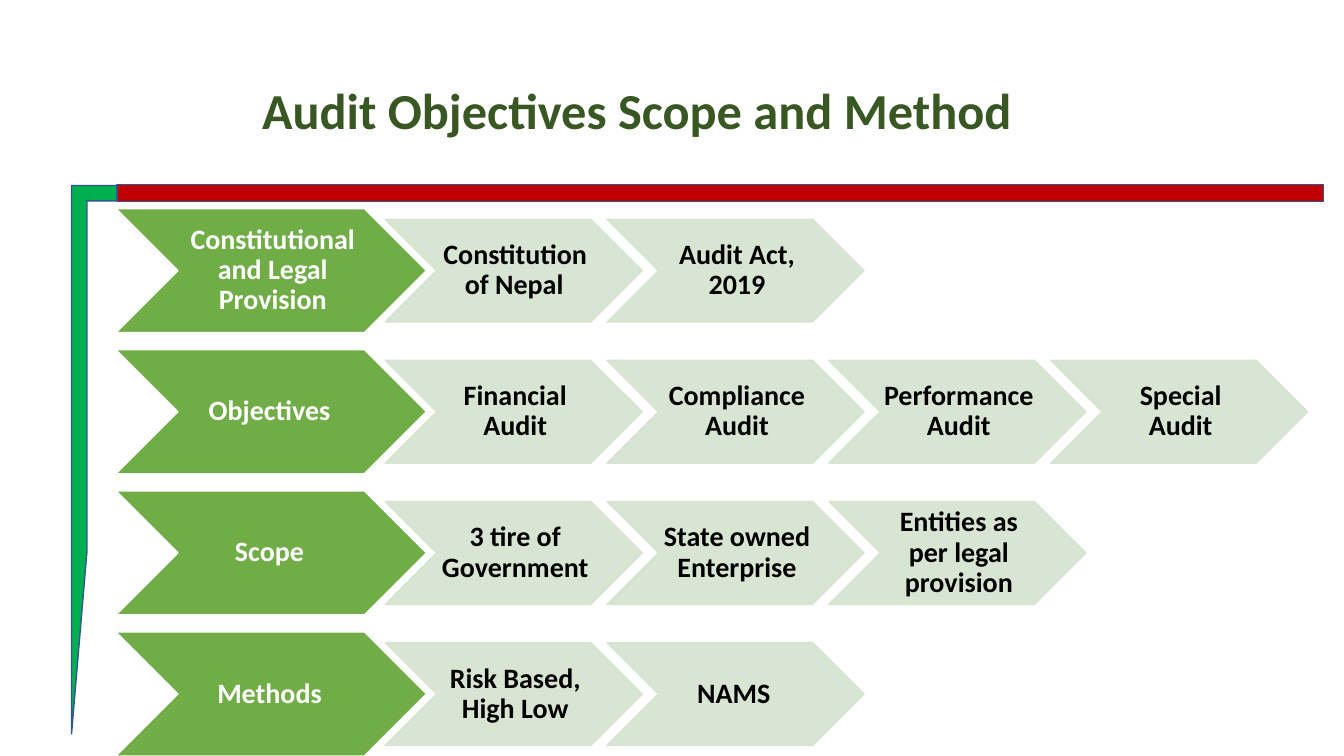
from lxml import etree
from pptx import Presentation
from pptx.dml.color import RGBColor
from pptx.enum.shapes import MSO_SHAPE as Shape
from pptx.enum.text import MSO_ANCHOR as Anchor, MSO_AUTO_SIZE as AutoSize, PP_ALIGN as Align
from pptx.oxml.ns import qn
from pptx.util import Inches, Pt

COLORS = {
    "title": "385723", "frame": "00B050", "bar": "C00000", "outline": "325491",
    "topic": "70AD47", "item": "D5E3CF", "white": "FFFFFF", "black": "000000",
}
FONT = "Calibri"

# Each row: topic, then its items
ROWS = [
    ("Constitutional and Legal Provision", ["Constitution of Nepal\t", "Audit Act, 2019"]),
    ("Objectives ", ["Financial Audit", "Compliance Audit", "Performance Audit", "Special Audit"]),
    ("Scope ", ["3 tire of Government", "State owned Enterprise", "Entities as per legal provision"]),
    ("Methods ", ["Risk Based, High Low", "NAMS "]),
]
ROW_TOP, ROW_STEP = 2.07, 1.4
TOPIC_LEFT, TOPIC_WIDTH, TOPIC_HEIGHT = 1.15, 3.08, 1.23
ITEM_LEFT, ITEM_STEP, ITEM_WIDTH, ITEM_HEIGHT = 3.82, 2.2, 2.55, 1.02


class SlideBuilder:
    def __init__(self, slide):
        self.slide = slide

    def color(self, name):
        return RGBColor.from_string(COLORS[name])

    def set_text(self, text_frame, text, size, color, align):
        text_frame.text = text
        text_frame.word_wrap = True
        text_frame.auto_size = AutoSize.NONE
        text_frame.vertical_anchor = Anchor.MIDDLE
        paragraph = text_frame.paragraphs[0]
        paragraph.alignment = align
        paragraph.line_spacing = 0.9
        for run in paragraph.runs:
            run.font.name = FONT
            run.font.size = Pt(size)
            run.font.bold = True
            run.font.color.rgb = self.color(color)

    def title(self, text, left, top, width, height):
        title = self.slide.shapes.title
        title.left, title.top = Inches(left), Inches(top)
        title.width, title.height = Inches(width), Inches(height)
        self.set_text(title.text_frame, text, 36, "title", Align.LEFT)

    def shape(self, kind, left, top, width, height, fill, line):
        shape = self.slide.shapes.add_shape(
            kind, Inches(left), Inches(top), Inches(width), Inches(height))
        shape.shadow.inherit = False
        shape.fill.solid()
        shape.fill.fore_color.rgb = self.color(fill)
        shape.line.color.rgb = self.color(line)
        shape.line.width = Pt(1)
        return shape

    def chevron(self, text, left, top, width, height, fill, line, text_color, opacity=100):
        shape = self.shape(Shape.CHEVRON, left, top, width, height, fill, line)
        if opacity < 100:
            for color in shape._element.spPr.iter(qn("a:srgbClr")):
                etree.SubElement(color, qn("a:alpha"), val=str(opacity * 1000))
        text_frame = shape.text_frame
        text_frame.margin_left, text_frame.margin_right = Inches(0.03), Inches(0)
        text_frame.margin_top = text_frame.margin_bottom = Inches(0.01)
        self.set_text(text_frame, text, 20, text_color, Align.CENTER)


def main():
    presentation = Presentation()
    presentation.slide_width, presentation.slide_height = Inches(13.33), Inches(7.5)
    slide = presentation.slides.add_slide(presentation.slide_layouts.get_by_name("Title Only"))
    builder = SlideBuilder(slide)

    # Frame and title
    builder.shape(Shape.HALF_FRAME, 0.71, 1.84, 0.46, 5.44, "frame", "outline")
    builder.shape(Shape.RECTANGLE, 1.16, 1.83, 11.97, 0.17, "bar", "outline")
    builder.title("Audit Objectives Scope and Method", 2.5, 0.4, 8.89, 1.45)

    # Rows of chevrons, items centred on their topic
    for row, (topic, items) in enumerate(ROWS):
        top = ROW_TOP + row * ROW_STEP
        builder.chevron(topic, TOPIC_LEFT, top, TOPIC_WIDTH, TOPIC_HEIGHT,
                        "topic", "white", "white")
        item_top = top + (TOPIC_HEIGHT - ITEM_HEIGHT) / 2
        for column, item in enumerate(items):
            builder.chevron(item, ITEM_LEFT + column * ITEM_STEP, item_top,
                            ITEM_WIDTH, ITEM_HEIGHT, "item", "item", "black", opacity=90)

    presentation.save("out.pptx")


if __name__ == "__main__":
    main()
